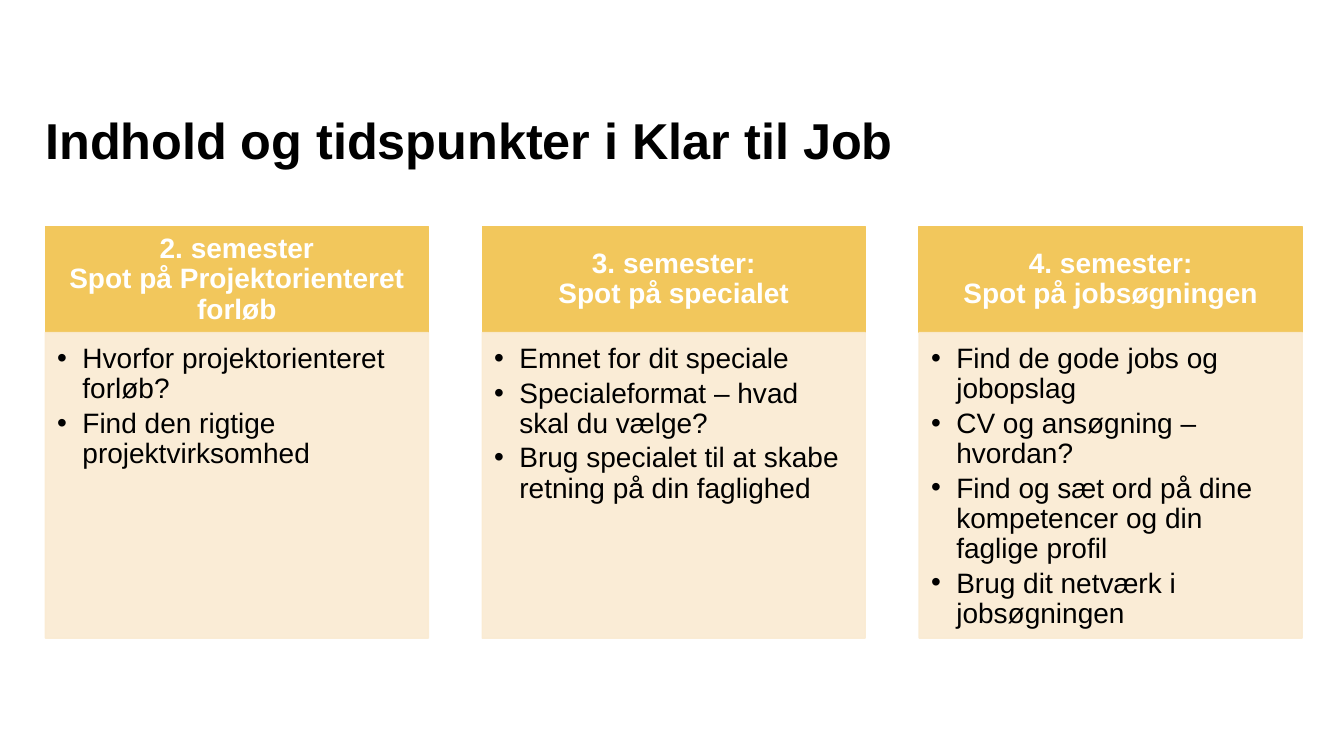
from lxml.etree import SubElement
from pptx import Presentation
from pptx.dml.color import RGBColor
from pptx.enum.shapes import MSO_SHAPE as Shape
from pptx.enum.text import MSO_ANCHOR as Anchor, MSO_AUTO_SIZE as AutoSize, PP_ALIGN as Align
from pptx.oxml.ns import qn
from pptx.util import Pt

FONT = "Arial"
GOLD, CREAM, BLACK, WHITE = "F2C75C", "FAEBD2", "000000", "FFFFFF"
LEFT = 32.4
COLUMN_WIDTH, COLUMN_PITCH = 273.6, 312.1
HEADER_HEIGHT = 75.6

SEMESTERS = [
    ("2. semester\nSpot på Projektorienteret forløb",
     ["Hvorfor projektorienteret forløb?",
      "Find den rigtige projektvirksomhed"]),
    ("3. semester:\nSpot på specialet",
     ["Emnet for dit speciale",
      "Specialeformat – hvad skal du vælge?",
      "Brug specialet til at skabe retning på din faglighed"]),
    ("4. semester:\nSpot på jobsøgningen",
     ["Find de gode jobs og jobopslag",
      "CV og ansøgning – hvordan?",
      "Find og sæt ord på dine kompetencer og din faglige profil",
      "Brug dit netværk i jobsøgningen"]),
]


def color(value):
    return RGBColor.from_string(value)


def set_frame(frame, anchor, margins):
    frame.word_wrap = True
    frame.auto_size = AutoSize.NONE
    frame.vertical_anchor = anchor
    (frame.margin_left, frame.margin_top,
     frame.margin_right, frame.margin_bottom) = map(Pt, margins)


def format_para(para, size, ink, bold, align, line_spacing):
    para.alignment = align
    para.line_spacing = line_spacing
    for span in para.runs:
        span.font.name = FONT
        span.font.size = Pt(size)
        span.font.bold = bold
        span.font.color.rgb = color(ink)


def add_bullet(para, indent):
    props = para._p.get_or_add_pPr()
    props.set("marL", str(Pt(indent)))
    props.set("indent", str(-Pt(indent)))
    SubElement(props, qn("a:buFont"), typeface=FONT)
    SubElement(props, qn("a:buChar"), char="•")


def add_panel(page, left, top, width, height, fill, opacity=100):
    panel = page.shapes.add_shape(Shape.RECTANGLE, Pt(left), Pt(top), Pt(width), Pt(height))
    panel.shadow.inherit = False
    panel.fill.solid()
    panel.fill.fore_color.rgb = color(fill)
    panel.line.color.rgb = color(fill)
    panel.line.width = Pt(1)
    if opacity < 100:
        for tint in panel._element.spPr.iter(qn("a:srgbClr")):
            SubElement(tint, qn("a:alpha"), val=str(opacity * 1000))
    return panel


def add_title(page, text, left, top, width, height):
    title = page.shapes.title
    title.left, title.top, title.width, title.height = map(Pt, (left, top, width, height))
    set_frame(title.text_frame, Anchor.TOP, (0, 0, 0, 0))
    title.text_frame.text = text
    format_para(title.text_frame.paragraphs[0], 36, BLACK, True, Align.LEFT, 0.97)


def add_semester(page, heading, topics, left, top, width, height):
    # Coloured heading
    header = add_panel(page, left, top, width, HEADER_HEIGHT, GOLD)
    set_frame(header.text_frame, Anchor.MIDDLE, (11.2, 6.4, 11.2, 6.4))
    para = header.text_frame.paragraphs[0]
    para.text = heading
    format_para(para, 20, WHITE, True, Align.CENTER, 0.9)

    # Bulleted topics
    body = add_panel(page, left, top + HEADER_HEIGHT, width, height - HEADER_HEIGHT, CREAM, 90)
    frame = body.text_frame
    set_frame(frame, Anchor.TOP, (8.5, 8.5, 11.4, 12.8))
    frame.text = "\n".join(topics)
    for para in frame.paragraphs:
        add_bullet(para, 18)
        format_para(para, 20, BLACK, False, Align.LEFT, 0.9)
        para.space_after = Pt(3)


def main():
    deck = Presentation()
    deck.slide_width, deck.slide_height = Pt(960), Pt(540)
    page = deck.slides.add_slide(deck.slide_layouts[5])
    add_title(page, "Indhold og tidspunkter i Klar til Job", LEFT, 80.6, 863.3, 52.6)
    for index, (heading, topics) in enumerate(SEMESTERS):
        add_semester(page, heading, topics, LEFT + index * COLUMN_PITCH, 162, COLUMN_WIDTH, 293.8)
    deck.save("out.pptx")


if __name__ == "__main__":
    main()
